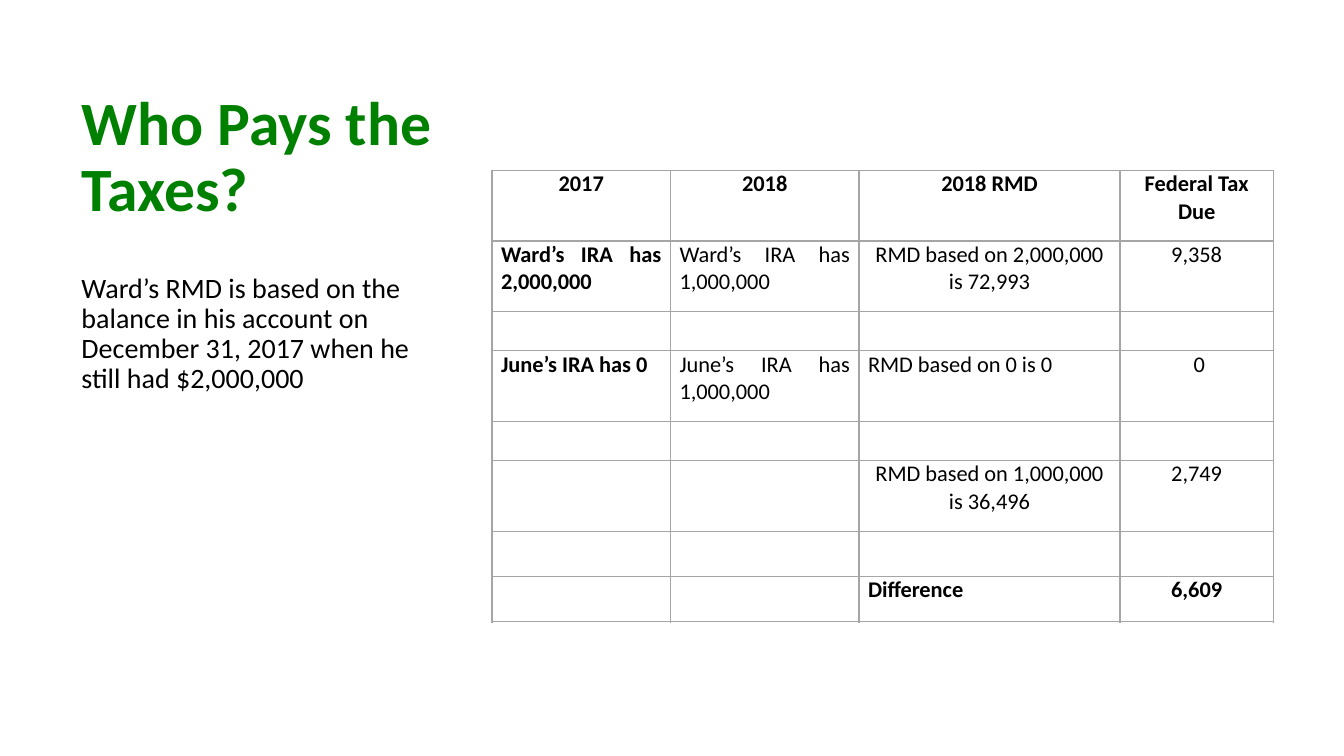
"""Build the slide on who pays the taxes."""
import pptx
import pptx.util
import pptx.dml.color
import pptx.enum.text
import lxml.etree
import pptx.oxml.ns

Inches = pptx.util.Inches
Align = pptx.enum.text.PP_ALIGN
Anchor = pptx.enum.text.MSO_ANCHOR

TITLE = "Who Pays the Taxes?"
NOTE = ("Ward’s RMD is based on the balance in his account on "
        "December 31, 2017 when he still had $2,000,000")
ROWS = [
    ("2017", "2018", "2018 RMD", "Federal Tax Due"),
    ("Ward’s IRA has 2,000,000", "Ward’s IRA has 1,000,000",
     "RMD based on 2,000,000 is 72,993", "9,358"),
    ("", "", "", ""),
    ("June’s IRA has 0", "June’s IRA has 1,000,000", "RMD based on 0 is 0", " 0"),
    ("", "", "", ""),
    ("", "", "RMD based on 1,000,000 is 36,496", "2,749"),
    ("", "", "", ""),
    ("", "", "Difference", "6,609"),
]
WIDTHS = [1.77, 1.87, 2.59, 1.52]
HEIGHTS = [0.7, 0.7, 0.39, 0.7, 0.39, 0.7, 0.45, 0.45]
LEFT_ROWS = {"RMD based on 0 is 0", "Difference"}
BLACK, GREEN, GRAY = "000000", "008000", "A5A5A5"
LAST = len(ROWS) - 1
CELL = {"margin_left": Inches(0.09), "margin_right": Inches(0.09),
        "margin_top": 0, "margin_bottom": 0}


def put(item, form):
    """Set each attribute in form on item."""
    for name, value in form.items():
        setattr(item, name, value)


def color(code):
    """Turn a hex string into a colour."""
    return pptx.dml.color.RGBColor.from_string(code)


def write(frame, text, size, code, bold=False, align=Align.LEFT, space=1.0):
    """Write one styled paragraph into a frame."""
    para = frame.paragraphs[0]
    put(para, {"alignment": align, "line_spacing": space})
    font = para.font
    if text:
        run = para.add_run()
        run.text = text
        font = run.font
    put(font, {"name": "Calibri", "size": pptx.util.Pt(size), "bold": bold})
    font.color.rgb = color(code)


def border(cell, sides):
    """Draw the cell's four sides at the given widths."""
    props = cell._tc.get_or_add_tcPr()
    for spot, (side, width) in enumerate(sides.items()):
        line = lxml.etree.Element(pptx.oxml.ns.qn("a:ln" + side),
                                  w=str(pptx.util.Pt(width)))
        fill = lxml.etree.SubElement(line, pptx.oxml.ns.qn("a:solidFill"))
        lxml.etree.SubElement(fill, pptx.oxml.ns.qn("a:srgbClr"), val=GRAY)
        props.insert(spot, line)


def fill_cell(cell, text, row, col):
    """Format one cell by its place in the table."""
    put(cell, CELL)
    cell.fill.background()
    mid = row == 0 or col == 3 or (col == 2 and text not in LEFT_ROWS)
    bold = row in (0, LAST) or col == 0
    write(cell.text_frame, text, 16, BLACK, bold,
          Align.CENTER if mid else Align.JUSTIFY)
    border(cell, {"L": 1, "R": 1, "T": 2 if row == 1 else 1,
                  "B": 2 if row == 0 else 1})


def main():
    """Make and save the slide."""
    deck = pptx.Presentation()
    put(deck, {"slide_width": Inches(13.33), "slide_height": Inches(7.5)})
    slide = deck.slides.add_slide(deck.slide_layouts[5])

    title = slide.shapes.title
    put(title, {"left": Inches(0.71), "top": Inches(0.69),
                "width": Inches(3.83), "height": Inches(1.77)})
    put(title.text_frame, {"word_wrap": True, "vertical_anchor": Anchor.MIDDLE,
                           "auto_size": pptx.enum.text.MSO_AUTO_SIZE.NONE})
    write(title.text_frame, TITLE, 44, GREEN, True, space=0.9)

    note = slide.shapes.add_textbox(Inches(0.71), Inches(2.67),
                                    Inches(3.83), Inches(4.14))
    note.text_frame.word_wrap = True
    write(note.text_frame, NOTE, 20, BLACK, space=0.9)

    table = slide.shapes.add_table(
        len(ROWS), len(WIDTHS), Inches(4.88), Inches(1.69),
        Inches(sum(WIDTHS)), Inches(sum(HEIGHTS))).table
    put(table, {"first_row": False, "horz_banding": False})
    for col, width in enumerate(WIDTHS):
        table.columns[col].width = Inches(width)
    for row, (height, texts) in enumerate(zip(HEIGHTS, ROWS)):
        table.rows[row].height = Inches(height)
        for col, text in enumerate(texts):
            fill_cell(table.cell(row, col), text, row, col)

    deck.save("out.pptx")


if __name__ == "__main__":
    main()
